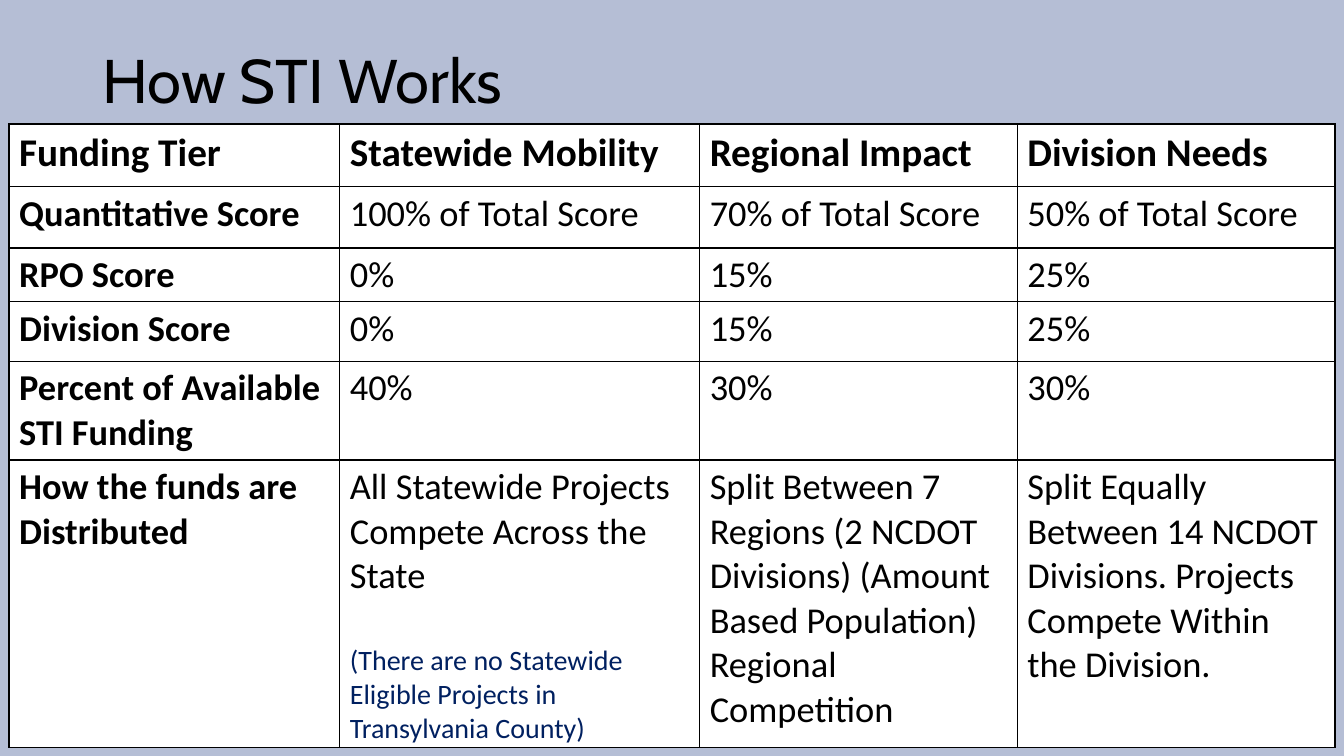
import pptx
import pptx.dml.color
import pptx.enum.text
import pptx.oxml
import pptx.oxml.ns
import pptx.util
from dataclasses import dataclass

Inches = pptx.util.Inches
Pt = pptx.util.Pt


@dataclass(frozen=True)
class Theme:
    back: str = "B5BED5"
    cell: str = "FFFFFF"
    ink: str = "000000"
    note: str = "002060"
    title: int = 44
    head: int = 28
    body: int = 26
    small: int = 20


theme = Theme()


def style(para, face, size, color, bold=False):
    for run in para.runs:
        run.font.name = face
        run.font.size = Pt(size)
        run.font.bold = bold
        run.font.color.rgb = pptx.dml.color.RGBColor.from_string(color)


def border(cell):
    props = cell._tc.get_or_add_tcPr()
    for spot, side in enumerate("LRTB"):
        props.insert(spot, pptx.oxml.parse_xml(
            f'<a:ln{side} {pptx.oxml.ns.nsdecls("a")} w="{Pt(1)}"><a:solidFill>'
            f'<a:srgbClr val="{theme.ink}"/></a:solidFill></a:ln{side}>'))


# Slide and background
deck = pptx.Presentation()
deck.slide_width = Inches(13.33)
deck.slide_height = Inches(7.5)
slide = deck.slides.add_slide(deck.slide_layouts[6])
slide.background.fill.solid()
slide.background.fill.fore_color.rgb = pptx.dml.color.RGBColor.from_string(theme.back)

# Title
title = slide.shapes.add_textbox(Inches(0.92), Inches(0.27), Inches(11.5), Inches(1.12))
frame = title.text_frame
frame.word_wrap = True
frame.vertical_anchor = pptx.enum.text.MSO_ANCHOR.MIDDLE
frame.text = "How STI Works"
frame.paragraphs[0].line_spacing = 0.9
style(frame.paragraphs[0], "Cabin", theme.title, theme.ink)

# Funding table
rows = [
    ["Funding Tier", "Statewide Mobility", "Regional Impact", "Division Needs"],
    ["Quantitative Score", "100% of Total Score", "70% of Total Score", "50% of Total Score"],
    ["RPO Score", "0%", "15%", "25%"],
    ["Division Score", "0%", "15%", "25%"],
    ["Percent of Available STI Funding", "40%", "30%", "30%"],
    ["How the funds are Distributed",
     "All Statewide Projects Compete Across the State",
     "Split Between 7 Regions (2 NCDOT Divisions) (Amount Based Population) "
     "Regional Competition",
     "Split Equally Between 14 NCDOT Divisions. Projects Compete Within the Division."],
]
widths = [3.28, 3.57, 3.15, 3.15]
heights = [0.62, 0.61, 0.51, 0.59, 0.98, 2.85]
table = slide.shapes.add_table(len(rows), len(widths), Inches(0.09), Inches(1.23),
                               Inches(sum(widths)), Inches(sum(heights))).table
for col, width in zip(table.columns, widths):
    col.width = Inches(width)
for row, height in zip(table.rows, heights):
    row.height = Inches(height)

for r, row in enumerate(rows):
    for c, text in enumerate(row):
        cell = table.cell(r, c)
        cell.text_frame.text = text
        size = theme.head if r == 0 else theme.body
        style(cell.text_frame.paragraphs[0], "Calibri", size, theme.ink, r == 0 or c == 0)
        cell.fill.solid()
        cell.fill.fore_color.rgb = pptx.dml.color.RGBColor.from_string(theme.cell)
        border(cell)

# Note on statewide projects, one body line below the text
note = table.cell(5, 1).text_frame.add_paragraph()
note.text = "(There are no Statewide Eligible Projects in Transylvania County)"
note.space_before = Pt(32)
style(note, "Calibri", theme.small, theme.note)

deck.save("out.pptx")
